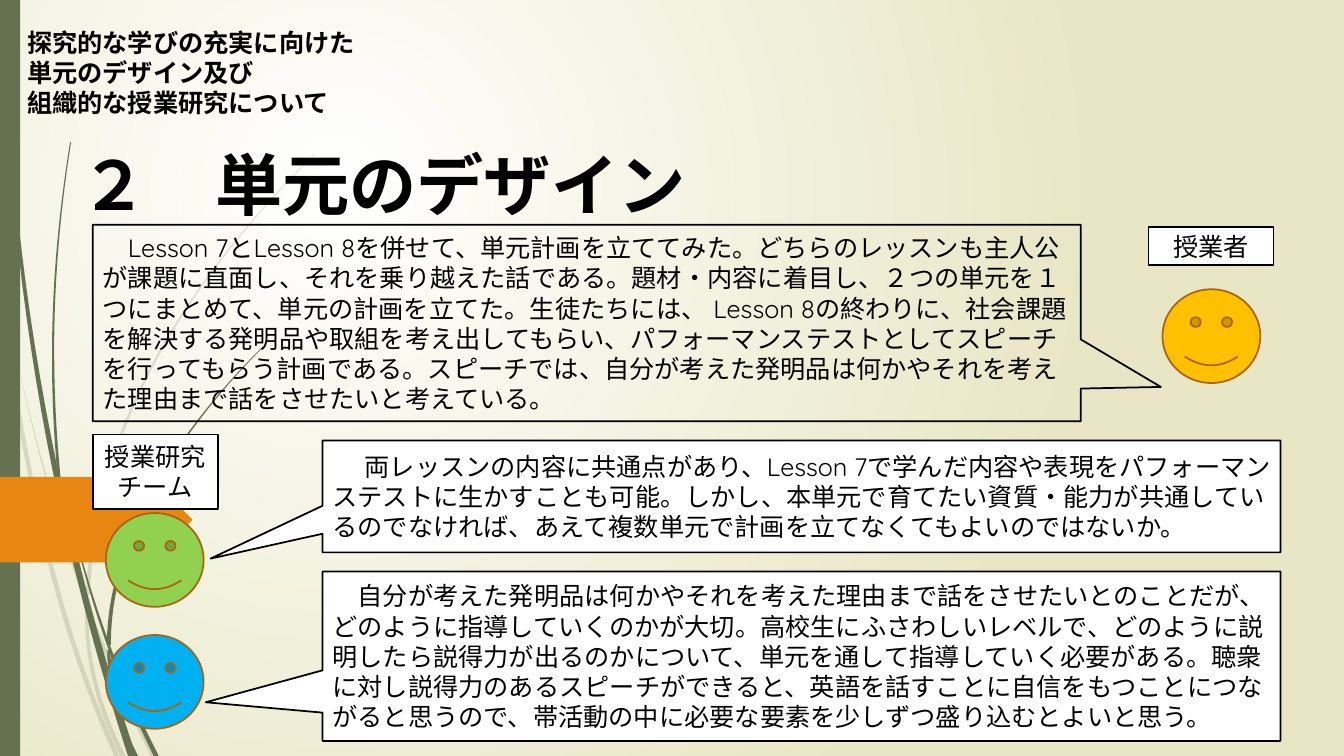
"""Build the slide on unit design with a teacher's plan and two team comments."""
import pptx
import pptx.util
import pptx.dml.color
import pptx.enum.shapes
import pptx.enum.text
import pptx.oxml
import pptx.oxml.ns
from pptx.util import Inches

RGBColor = pptx.dml.color.RGBColor
SHAPE = pptx.enum.shapes.MSO_SHAPE
ALIGN = pptx.enum.text.PP_ALIGN
ANCHOR = pptx.enum.text.MSO_ANCHOR
qn = pptx.oxml.ns.qn
NAMESPACE = pptx.oxml.ns.nsdecls("a")

BLACK = RGBColor(0x00, 0x00, 0x00)
WHITE = RGBColor(0xFF, 0xFF, 0xFF)
CREAM = RGBColor(0xE8, 0xE6, 0xC4)
MOSS = RGBColor(0x64, 0x72, 0x52)
ORANGE = RGBColor(0xE7, 0x87, 0x12)
BROWN = RGBColor(0xAB, 0x64, 0x0D)
AMBER = RGBColor(0xFF, 0xC0, 0x00)
GREEN = RGBColor(0x92, 0xD0, 0x50)
BLUE = RGBColor(0x00, 0xB0, 0xF0)

HEADING_FONT = "Arial"
BODY_FONT = "Quicksand"
FACE_SIZE = (0.97, 0.93)
TEAM_FACE_LEFT = 1.05
TEAM_CALLOUT_LEFT, TEAM_CALLOUT_WIDTH = 3.2, 9.5
STEM_STEPS = 24


def paint(shape, fill, line=None):
    """Set fill and outline, where None means absent."""
    shape.shadow.inherit = False
    if fill is None:
        shape.fill.background()
    else:
        shape.fill.solid()
        shape.fill.fore_color.rgb = fill
    if line is None:
        shape.line.fill.background()
    else:
        shape.line.color.rgb = line
        shape.line.width = pptx.util.Pt(1.25)


def write(shape, paragraphs, font, size=18, bold=False, align=ALIGN.LEFT, anchor=ANCHOR.MIDDLE):
    """Fill a shape with paragraphs, each given as a list of lines."""
    frame = shape.text_frame
    frame.word_wrap = True
    frame.vertical_anchor = anchor
    for index, lines in enumerate(paragraphs):
        para = frame.add_paragraph() if index else frame.paragraphs[0]
        para.alignment = align
        for number, line in enumerate(lines):
            if number:
                para.add_line_break()
            span = para.add_run()
            span.text = line
            span.font.name = font
            span.font.size = pptx.util.Pt(size)
            span.font.bold = bold
            span.font.color.rgb = BLACK
    for latin in list(shape.element.iter(qn("a:latin"))):
        latin.addnext(pptx.oxml.parse_xml(f'<a:ea {NAMESPACE} typeface="{font}"/>'))


deck = pptx.Presentation()
deck.slide_width, deck.slide_height = Inches(13.33), Inches(7.5)
page = deck.slides.add_slide(deck.slide_layouts[5])
shapes = page.shapes

backdrop = page.background.fill
backdrop.gradient()
for stop, color in zip(backdrop.gradient_stops, (WHITE, CREAM)):
    stop.color.rgb = color
linear = page.background.element.find(".//" + qn("a:lin"))
linear.getparent().replace(linear, pptx.oxml.parse_xml(
    f'<a:path {NAMESPACE} path="circle">'
    '<a:fillToRect l="50000" t="50000" r="100000" b="100000"/></a:path>'))

# Each grass stem: opacity, width at start and end, four points it passes through.
stems = [
    (20, 0.04, 0.05, [(0, 2.9), (0.25, 4.45), (0.61, 6), (1.16, 7.5)]),
    (20, 0, 0.05, [(0.14, 3.45), (0.49, 4.85), (0.92, 6.15), (1.52, 7.5)]),
    (20, 0.03, 0.05, [(0.86, 5.99), (0.89, 6.5), (1.01, 7), (1.22, 7.5)]),
    (20, 0.04, 0.01, [(0.87, 5.9), (1.17, 4.4), (1.92, 2.95), (3.12, 1.53)]),
    (100, 0.01, 0.08, [(0.04, 0), (0.2, 2.5), (0.62, 5), (1.31, 7.5)]),
    (100, 0, 0.05, [(0.6, 4.72), (0.85, 5.7), (1.15, 6.6), (1.55, 7.5)]),
    (100, 0.01, 0.03, [(0.7, 1.41), (0.56, 2.6), (0.53, 3.8), (0.62, 5.05)]),
    (100, 0.04, 0.01, [(1.08, 6.4), (1.27, 5.4), (1.8, 4.4), (2.61, 3.44)]),
    (100, 0.03, 0.04, [(1.08, 6.45), (1.11, 6.8), (1.2, 7.15), (1.35, 7.5)]),
]
for opacity, start_width, end_width, knots in stems:
    left_edge, right_edge = [], []
    for step in range(STEM_STEPS + 1):
        t = step / STEM_STEPS
        weights = ((1 - 3 * t) * (2 - 3 * t) * (1 - t) / 2,
                   9 * t * (2 - 3 * t) * (1 - t) / 2,
                   9 * t * (3 * t - 1) * (1 - t) / 2,
                   t * (3 * t - 1) * (3 * t - 2) / 2)
        x = sum(weight * knot[0] for weight, knot in zip(weights, knots))
        y = sum(weight * knot[1] for weight, knot in zip(weights, knots))
        half_width = (start_width + (end_width - start_width) * t) / 2
        left_edge.append((Inches(max(x - half_width, 0)), Inches(y)))
        right_edge.append((Inches(x + half_width), Inches(y)))
    outline = left_edge + right_edge[::-1]
    builder = shapes.build_freeform(*outline[0])
    builder.add_line_segments(outline[1:], close=True)
    stem = builder.convert_to_shape()
    paint(stem, MOSS)
    if opacity < 100:
        tint = stem.element.spPr.find(".//" + qn("a:srgbClr"))
        tint.append(pptx.oxml.parse_xml(f'<a:alpha {NAMESPACE} val="{opacity * 1000}"/>'))

side_band = shapes.add_shape(SHAPE.RECTANGLE, 0, 0, Inches(0.2), deck.slide_height)
paint(side_band, MOSS)
page_arrow = shapes.add_shape(SHAPE.PENTAGON, *map(Inches, (0, 4.73, 1.91, 0.85)))
paint(page_arrow, ORANGE)

title = shapes.title
title.left, title.top, title.width, title.height = map(Inches, (0.7, 1.4, 9.71, 0.88))
write(title, [["２　単元のデザイン"]], HEADING_FONT, 48, True, anchor=ANCHOR.BOTTOM)
title.text_frame.auto_size = pptx.enum.text.MSO_AUTO_SIZE.NONE
title.text_frame.paragraphs[0].line_spacing = 0.9
title.element.getparent().append(title.element)

header = shapes.add_textbox(*map(Inches, (0.17, 0.22, 4.62, 0.95)))
write(header, [["探究的な学びの充実に向けた", "単元のデザイン及び"], ["組織的な授業研究について"]],
      HEADING_FONT, bold=True, anchor=ANCHOR.TOP)

teacher_plan = (
    "　Lesson 7とLesson 8を併せて、単元計画を立ててみた。どちらのレッスンも主人公が課題に直面し、"
    "それを乗り越えた話である。題材・内容に着目し、２つの単元を１つにまとめて、単元の計画を立てた。"
    "生徒たちには、 Lesson 8の終わりに、社会課題を解決する発明品や取組を考え出してもらい、"
    "パフォーマンステストとしてスピーチを行ってもらう計画である。"
    "スピーチでは、自分が考えた発明品は何かやそれを考えた理由まで話をさせたいと考えている。")
speech_comment = (
    "　自分が考えた発明品は何かやそれを考えた理由まで話をさせたいとのことだが、"
    "どのように指導していくのかが大切。高校生にふさわしいレベルで、どのように説明したら説得力が出るのかについて、"
    "単元を通して指導していく必要がある。聴衆に対し説得力のあるスピーチができると、"
    "英語を話すことに自信をもつことにつながると思うので、帯活動の中に必要な要素を少しずつ盛り込むとよいと思う。")
unit_comment = (
    "　 両レッスンの内容に共通点があり、Lesson 7で学んだ内容や表現をパフォーマンステストに生かすことも可能。"
    "しかし、本単元で育てたい資質・能力が共通しているのでなければ、"
    "あえて複数単元で計画を立てなくてもよいのではないか。")
callouts = [
    (teacher_plan, (0.92, 2.23, 9.8, 1.95), (0.581, 0.325), None),
    (speech_comment, (TEAM_CALLOUT_LEFT, 5.67, TEAM_CALLOUT_WIDTH, 1.68), (-0.622, 0.272), WHITE),
    (unit_comment, (TEAM_CALLOUT_LEFT, 4.37, TEAM_CALLOUT_WIDTH, 1.11), (-0.617, 0.556), WHITE),
]
for speech, place, tail, fill in callouts:
    callout = shapes.add_shape(SHAPE.RECTANGULAR_CALLOUT, *map(Inches, place))
    callout.adjustments[0], callout.adjustments[1] = tail
    paint(callout, fill, BLACK)
    write(callout, [[speech]], BODY_FONT)

labels = [([["授業者"]], (11.39, 2.25, 1.24, 0.38)),
          ([["授業研究"], ["チーム"]], (0.92, 4.31, 1.24, 0.74))]
for name, place in labels:
    label = shapes.add_shape(SHAPE.RECTANGLE, *map(Inches, place))
    paint(label, WHITE, BLACK)
    write(label, name, BODY_FONT, align=ALIGN.CENTER)

faces = [(11.53, 2.87, AMBER), (TEAM_FACE_LEFT, 5.09, GREEN), (TEAM_FACE_LEFT, 6.3, BLUE)]
for left, top, color in faces:
    face = shapes.add_shape(SHAPE.SMILEY_FACE, *map(Inches, (left, top, *FACE_SIZE)))
    paint(face, color, BROWN)

deck.save("out.pptx")
